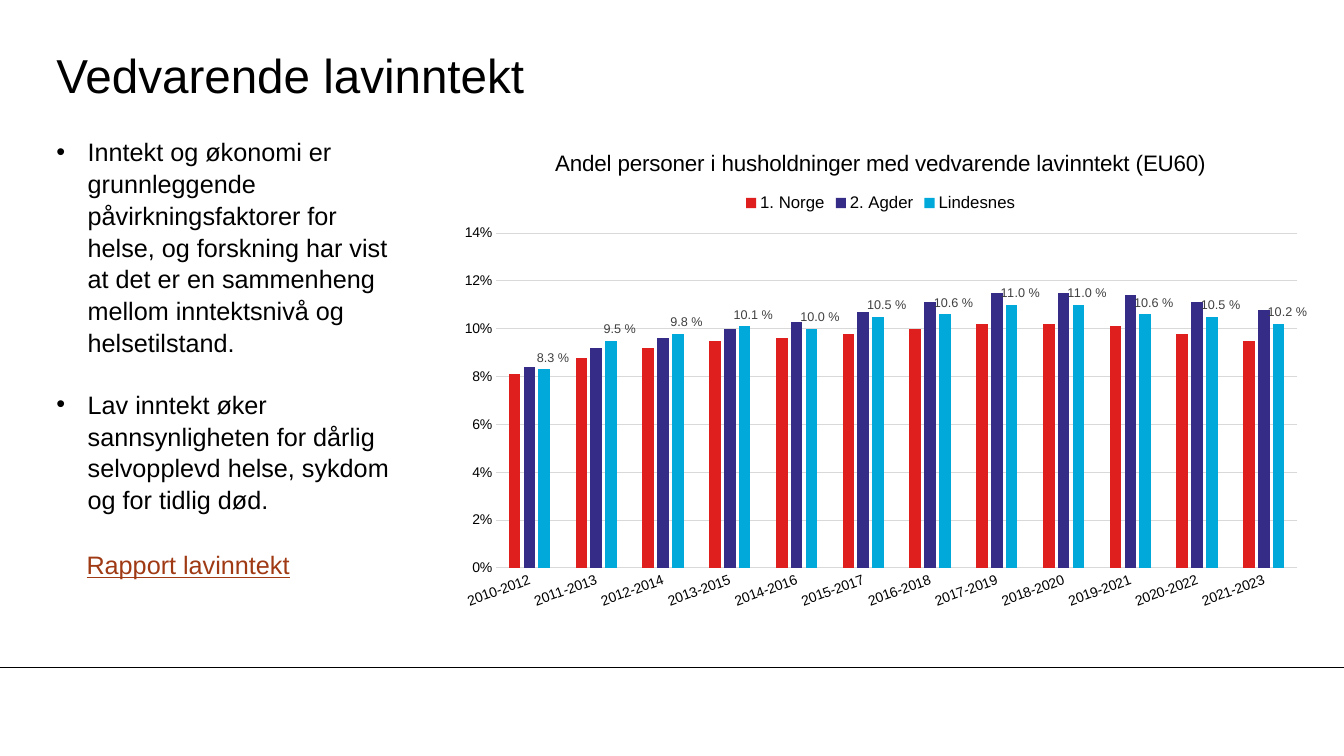
from dataclasses import dataclass

from lxml.etree import SubElement
from pptx import Presentation
from pptx.chart.data import CategoryChartData
from pptx.dml.color import RGBColor
from pptx.enum.chart import XL_CHART_TYPE, XL_LABEL_POSITION, XL_LEGEND_POSITION, XL_TICK_MARK
from pptx.enum.text import MSO_ANCHOR, MSO_AUTO_SIZE, PP_ALIGN
from pptx.oxml import parse_xml
from pptx.oxml.ns import nsdecls, qn
from pptx.util import Inches, Pt


@dataclass(frozen=True)
class Theme:
    font: str = "Arial"
    text: RGBColor = RGBColor(0x00, 0x00, 0x00)
    link: RGBColor = RGBColor(0x9F, 0x3A, 0x14)
    grid: RGBColor = RGBColor(0xD9, 0xD9, 0xD9)
    label: RGBColor = RGBColor(0x40, 0x40, 0x40)
    norway: RGBColor = RGBColor(0xDF, 0x1F, 0x1D)
    agder: RGBColor = RGBColor(0x34, 0x2C, 0x86)
    lindesnes: RGBColor = RGBColor(0x00, 0xA9, 0xDA)
    title_size: int = 34
    body_size: int = 18
    chart_title_size: int = 16
    legend_size: int = 12
    axis_size: int = 10
    label_size: int = 9


THEME = Theme()
BULLETS = [
    "Inntekt og økonomi er grunnleggende påvirkningsfaktorer for helse, og forskning "
    "har vist at det er en sammenheng mellom inntektsnivå og helsetilstand.",
    "Lav inntekt øker sannsynligheten for dårlig selvopplevd helse, sykdom og for tidlig død.",
]
PERIODS = [f"{year}-{year + 2}" for year in range(2010, 2022)]
SERIES = [
    ("1. Norge", THEME.norway,
     [0.081, 0.088, 0.092, 0.095, 0.096, 0.098, 0.1, 0.102, 0.102, 0.101, 0.098, 0.095]),
    ("2. Agder", THEME.agder,
     [0.084, 0.092, 0.096, 0.1, 0.103, 0.107, 0.111, 0.115, 0.115, 0.114, 0.111, 0.108]),
    ("Lindesnes", THEME.lindesnes,
     [0.083, 0.095, 0.098, 0.101, 0.1, 0.105, 0.106, 0.11, 0.11, 0.106, 0.105, 0.102]),
]


def style_font(font, size, color=THEME.text):
    font.name = THEME.font
    font.size = Pt(size)
    font.bold = False
    font.color.rgb = color


def place(shape, box):
    shape.left, shape.top, shape.width, shape.height = (Inches(length) for length in box)


def add_title(slide, box):
    title = slide.shapes.title
    place(title, box)
    frame = title.text_frame
    frame.text = "Vedvarende lavinntekt"
    frame.auto_size = MSO_AUTO_SIZE.NONE
    frame.vertical_anchor = MSO_ANCHOR.MIDDLE
    frame.margin_left = frame.margin_right = frame.margin_top = frame.margin_bottom = 0
    paragraph = frame.paragraphs[0]
    paragraph.alignment = PP_ALIGN.LEFT
    style_font(paragraph.runs[0].font, THEME.title_size)


def add_bullets(slide, box):
    body = slide.placeholders[1]
    place(body, box)
    frame = body.text_frame
    frame.text = "\n".join(BULLETS)
    frame.auto_size = MSO_AUTO_SIZE.NONE
    for index, paragraph in enumerate(frame.paragraphs):
        properties = paragraph._p.get_or_add_pPr()
        properties.set("marL", str(Inches(0.31)))
        properties.set("indent", str(-Inches(0.31)))
        SubElement(properties, qn("a:buChar"), char="•")
        paragraph.line_spacing = 1.05
        paragraph.space_before = Pt(21.6 if index else 0)
        style_font(paragraph.runs[0].font, THEME.body_size)


def add_report_reference(slide, box):
    shape = slide.shapes.add_textbox(*(Inches(length) for length in box))
    shape.text_frame.word_wrap = True
    shape.text_frame.text = "Rapport lavinntekt"
    font = shape.text_frame.paragraphs[0].runs[0].font
    style_font(font, THEME.body_size, THEME.link)
    font.underline = True


def manual_layout(inner=False, **fractions):
    """Chart layout element; x, y, w and h are fractions of the chart."""
    target = '<c:layoutTarget val="inner"/>' if inner else ""
    modes = '<c:xMode val="edge"/><c:yMode val="edge"/>' if inner else ""
    values = "".join(f'<c:{name} val="{value}"/>' for name, value in fractions.items())
    return parse_xml(f'<c:layout {nsdecls("c")}><c:manualLayout>{target}{modes}{values}'
                     "</c:manualLayout></c:layout>")


def style_axes(chart):
    for axis in (chart.category_axis, chart.value_axis):
        axis.major_tick_mark = axis.minor_tick_mark = XL_TICK_MARK.NONE
        style_font(axis.tick_labels.font, THEME.axis_size)
    category_line = chart.category_axis.format.line
    category_line.color.rgb = THEME.grid
    category_line.width = Pt(0.75)
    category_text = chart.category_axis._element.find(qn("c:txPr"))
    category_text.find(qn("a:bodyPr")).set("rot", str(-20 * 60000))

    values = chart.value_axis
    values.minimum_scale, values.maximum_scale, values.major_unit = 0, 0.14, 0.02
    values.tick_labels.number_format = "0%"
    values.tick_labels.number_format_is_linked = False
    values.format.line.fill.background()
    values.major_gridlines.format.line.color.rgb = THEME.grid
    values.major_gridlines.format.line.width = Pt(0.75)


def label_points(series):
    """Show each value above its bar, moved a little to the right."""
    for index in range(len(PERIODS)):
        label = series.points[index].data_label
        label.position = XL_LABEL_POSITION.OUTSIDE_END
        style_font(label.font, THEME.label_size, THEME.label)
    for position in series._element.iter(qn("c:dLbl")):
        number_format = parse_xml(
            f'<c:numFmt {nsdecls("c")} formatCode="0.0\\ %" sourceLinked="0"/>')
        position.insert(1, manual_layout(x=0.01, y=0))
        position.insert(2, number_format)


def add_income_chart(slide, box):
    data = CategoryChartData(number_format="0.0%")
    data.categories = PERIODS
    for name, _, values in SERIES:
        data.add_series(name, values)
    chart = slide.shapes.add_chart(
        XL_CHART_TYPE.COLUMN_CLUSTERED, *(Inches(length) for length in box), data).chart
    style_font(chart.font, THEME.axis_size)

    chart.has_title = True
    title_frame = chart.chart_title.text_frame
    title_frame.text = "Andel personer i husholdninger med vedvarende lavinntekt (EU60)"
    style_font(title_frame.paragraphs[0].runs[0].font, THEME.chart_title_size)
    chart.chart_title.include_in_layout = False

    chart.has_legend = True
    chart.legend.position = XL_LEGEND_POSITION.TOP
    chart.legend.include_in_layout = False
    style_font(chart.legend.font, THEME.legend_size)

    style_axes(chart)
    plot = chart.plots[0]
    plot.gap_width, plot.overlap = 219, -27
    plot.vary_by_categories = False
    for series, (_, color, _) in zip(plot.series, SERIES):
        series.format.fill.solid()
        series.format.fill.fore_color.rgb = color
    label_points(plot.series[-1])

    plot_area = chart._chartSpace.chart.plotArea
    for layout in plot_area.findall(qn("c:layout")):
        plot_area.remove(layout)
    plot_area.insert(0, manual_layout(inner=True, x=0.057, y=0.211, w=0.923, h=0.685))


def add_footer_line(slide, top, width):
    line = slide.shapes.add_connector(1, 0, Inches(top), Inches(width), Inches(top))
    line.line.color.rgb = THEME.text
    line.line.width = Pt(0.75)
    SubElement(line._element.spPr, qn("a:effectLst"))


def main():
    presentation = Presentation()
    presentation.slide_width, presentation.slide_height = Inches(13.33), Inches(7.5)
    slide = presentation.slides.add_slide(presentation.slide_layouts[1])
    add_footer_line(slide, 6.62, 13.33)
    add_title(slide, (0.56, 0.36, 11.1, 0.75))
    add_bullets(slide, (0.46, 1.29, 3.5, 3.74))
    add_report_reference(slide, (0.76, 5.4, 2.65, 0.4))
    add_income_chart(slide, (4.43, 1.29, 8.61, 4.85))
    presentation.save("out.pptx")


if __name__ == "__main__":
    main()
